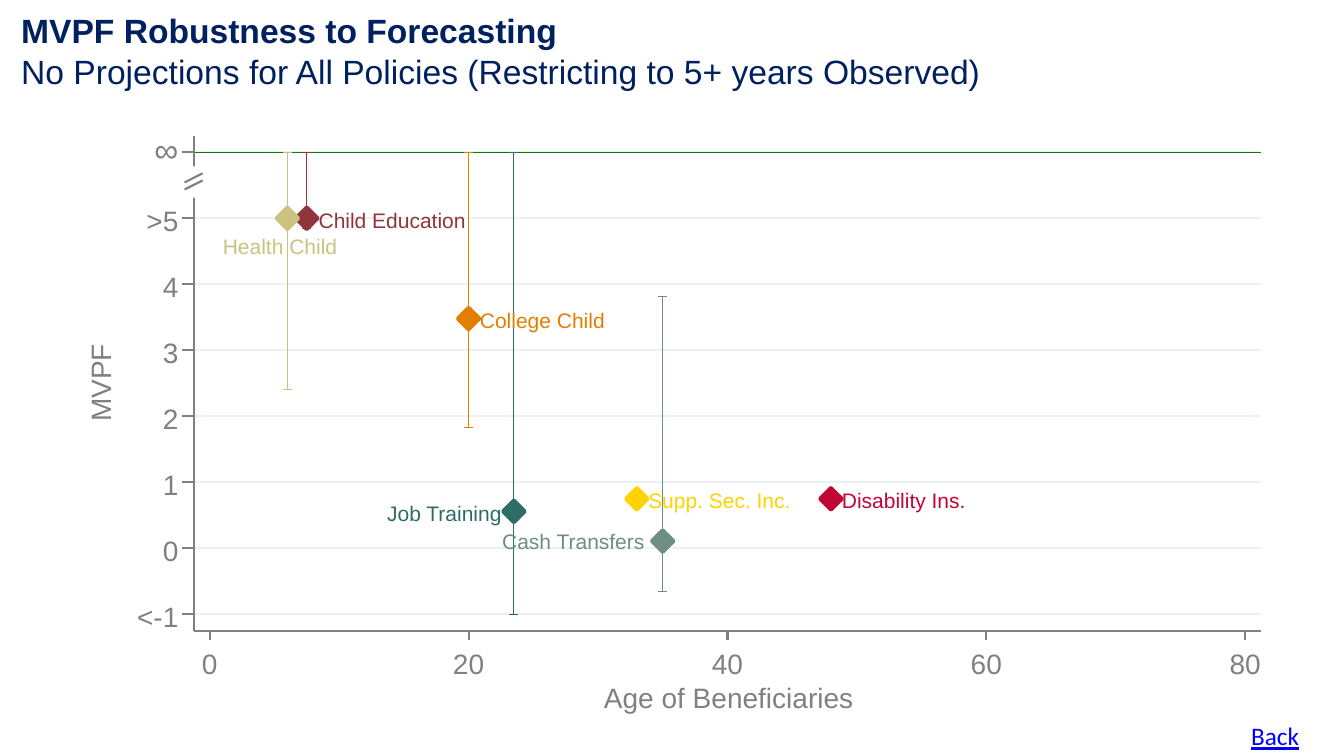
"""Build the slide on MVPF robustness to forecasting."""
import pptx
import pptx.dml.color
import pptx.enum.shapes
import pptx.enum.text
import pptx.oxml
import pptx.oxml.ns
import pptx.util

Inches = pptx.util.Inches
RGBColor = pptx.dml.color.RGBColor
ALIGN = pptx.enum.text.PP_ALIGN
SHAPE = pptx.enum.shapes.MSO_SHAPE

NAVY = RGBColor(0x00, 0x20, 0x60)
GRAY = RGBColor(0x80, 0x80, 0x80)
GRID = RGBColor(0xEA, 0xF2, 0xF3)
GREEN = RGBColor(0x00, 0x80, 0x00)
WHITE = RGBColor(0xFF, 0xFF, 0xFF)
BLUE = RGBColor(0x00, 0x00, 0xFF)
SAGE = RGBColor(0x6E, 0x8E, 0x84)
MAROON = RGBColor(0x90, 0x35, 0x3B)
ORANGE = RGBColor(0xE3, 0x7E, 0x00)
CRIMSON = RGBColor(0xC1, 0x05, 0x34)
KHAKI = RGBColor(0xCA, 0xC2, 0x7E)
TEAL = RGBColor(0x2D, 0x6D, 0x66)
YELLOW = RGBColor(0xFF, 0xD2, 0x00)

AXIS_LEFT, AXIS_RIGHT, AXIS_TOP, AXIS_BOTTOM = 1.92, 12.51, 1.35, 6.26
AGE_ZERO, MVPF_ZERO = 2.08, 5.44
AGE_STEP, MVPF_STEP = 10.27 / 80, 0.655
INFINITE = 6
MARKER = 0.22
CAP = 0.09

deck = pptx.Presentation()
deck.slide_width, deck.slide_height = Inches(13.33), Inches(7.5)
slide = deck.slides.add_slide(deck.slide_layouts[6])


def add_line(x1, y1, x2, y2, color, width=1.5):
    line = slide.shapes.add_connector(
        pptx.enum.shapes.MSO_CONNECTOR.STRAIGHT,
        Inches(x1), Inches(y1), Inches(x2), Inches(y2))
    line.line.color.rgb = color
    line.line.width = pptx.util.Pt(width)
    properties = line._element.find(pptx.oxml.ns.qn("p:spPr"))
    properties.append(pptx.oxml.parse_xml(
        f"<a:effectLst {pptx.oxml.ns.nsdecls('a')}/>"))


def add_text(lines, left, top, width, height, size, color, align=ALIGN.LEFT):
    box = slide.shapes.add_textbox(
        Inches(left), Inches(top), Inches(width), Inches(height))
    frame = box.text_frame
    frame.word_wrap = True
    frame.margin_left = frame.margin_right = 0
    frame.margin_top = frame.margin_bottom = 0
    frame.text = lines
    for paragraph in frame.paragraphs:
        paragraph.alignment = align
        paragraph.font.name = "Arial"
        paragraph.font.size = pptx.util.Pt(size)
        paragraph.font.color.rgb = color
    return box


# policy, color, age, MVPF, interval low and high, label left, top and width
policies = [
    ("Cash Transfers", SAGE, 35, 0.11, -0.66, 3.81, 4.98, 5.24, 1.59),
    ("Child Education", MAROON, 7.5, 5, 4.84, INFINITE, 3.16, 2.06, 1.62),
    ("College Child", ORANGE, 20, 3.48, 1.83, INFINITE, 4.76, 3.05, 1.4),
    ("Disability Ins.", CRIMSON, 48, 0.75, 0.72, 0.79, 8.35, 4.84, 1.39),
    ("Health Child", KHAKI, 6, 5, 2.4, INFINITE, 2.21, 2.32, 1.28),
    ("Job Training", TEAL, 23.5, 0.56, -1, INFINITE, 3.84, 4.97, 1.3),
    ("Supp. Sec. Inc.", YELLOW, 33, 0.75, 0.64, 0.86, 6.43, 4.84, 1.57),
]

for mvpf in range(-1, INFINITE + 1):
    y = MVPF_ZERO - mvpf * MVPF_STEP
    add_line(AXIS_LEFT, y, AXIS_RIGHT, y, GRID)
add_line(AXIS_LEFT, y, AXIS_RIGHT, y, GREEN, 0.75)

for name, color, age, mvpf, low, high, *label in policies:
    x = AGE_ZERO + age * AGE_STEP
    y_low, y_high = (MVPF_ZERO - bound * MVPF_STEP for bound in (low, high))
    add_line(x, y_low, x, y_high, color, 0.75)
    for y in (y_high, y_low):
        add_line(x - CAP / 2, y, x + CAP / 2, y, color, 0.75)

for name, color, age, mvpf, low, high, left, top, width in policies:
    x = AGE_ZERO + age * AGE_STEP
    y = MVPF_ZERO - mvpf * MVPF_STEP
    marker = slide.shapes.add_shape(
        SHAPE.DIAMOND, Inches(x - MARKER / 2), Inches(y - MARKER / 2),
        Inches(MARKER), Inches(MARKER))
    marker.shadow.inherit = False
    marker.fill.solid()
    marker.fill.fore_color.rgb = color
    marker.line.color.rgb = color
    marker.line.width = pptx.util.Pt(2.5)
    add_text(name, left, top, width, 0.3, 15, color)

add_line(AXIS_LEFT, AXIS_BOTTOM, AXIS_LEFT, AXIS_TOP, GRAY)
for mvpf, tick in enumerate(["<-1", "0", "1", "2", "3", "4", ">5"], start=-1):
    y = MVPF_ZERO - mvpf * MVPF_STEP
    add_line(AXIS_LEFT, y, AXIS_LEFT - 0.11, y, GRAY)
    add_text(tick, 1.23, y - 0.15, 0.54, 0.39, 20, GRAY, ALIGN.RIGHT)
y = MVPF_ZERO - INFINITE * MVPF_STEP
add_line(AXIS_LEFT, y, AXIS_LEFT - 0.11, y, GRAY)
add_text("MVPF", 0.57, 3.54, 0.9, 0.39, 20, GRAY).rotation = 270

add_line(AXIS_LEFT, AXIS_BOTTOM, AXIS_RIGHT, AXIS_BOTTOM, GRAY)
for age in range(0, 81, 20):
    x = AGE_ZERO + age * AGE_STEP
    add_line(x, AXIS_BOTTOM, x, AXIS_BOTTOM + 0.09, GRAY)
    add_text(str(age), x - 0.22, 6.41, 0.44, 0.39, 20, GRAY, ALIGN.CENTER)
add_text("Age of Beneficiaries", 5.99, 6.75, 2.62, 0.39, 20, GRAY)

title = add_text(
    "MVPF Robustness to Forecasting\n"
    "No Projections for All Policies (Restricting to 5+ years Observed)",
    0.21, 0.1, 11.62, 0.81, 24, NAVY)
title.text_frame.paragraphs[0].font.bold = True

axis_gap = slide.shapes.add_shape(
    SHAPE.RECTANGLE, Inches(1.61), Inches(1.65), Inches(0.58), Inches(0.31))
axis_gap.shadow.inherit = False
axis_gap.fill.solid()
axis_gap.fill.fore_color.rgb = WHITE
axis_gap.line.fill.background()
for y in (1.81, 1.88):
    add_line(AXIS_LEFT - 0.09, y, AXIS_LEFT + 0.09, y - 0.09, GRAY)
add_text("∞", 1.37, 1.28, 0.4, 0.4, 24, GRAY, ALIGN.RIGHT)

back = add_text("Back", 12.41, 7.15, 0.58, 0.3, 18, BLUE)
back.text_frame.paragraphs[0].font.name = "Calibri"
back.text_frame.paragraphs[0].font.underline = True

deck.save("out.pptx")
